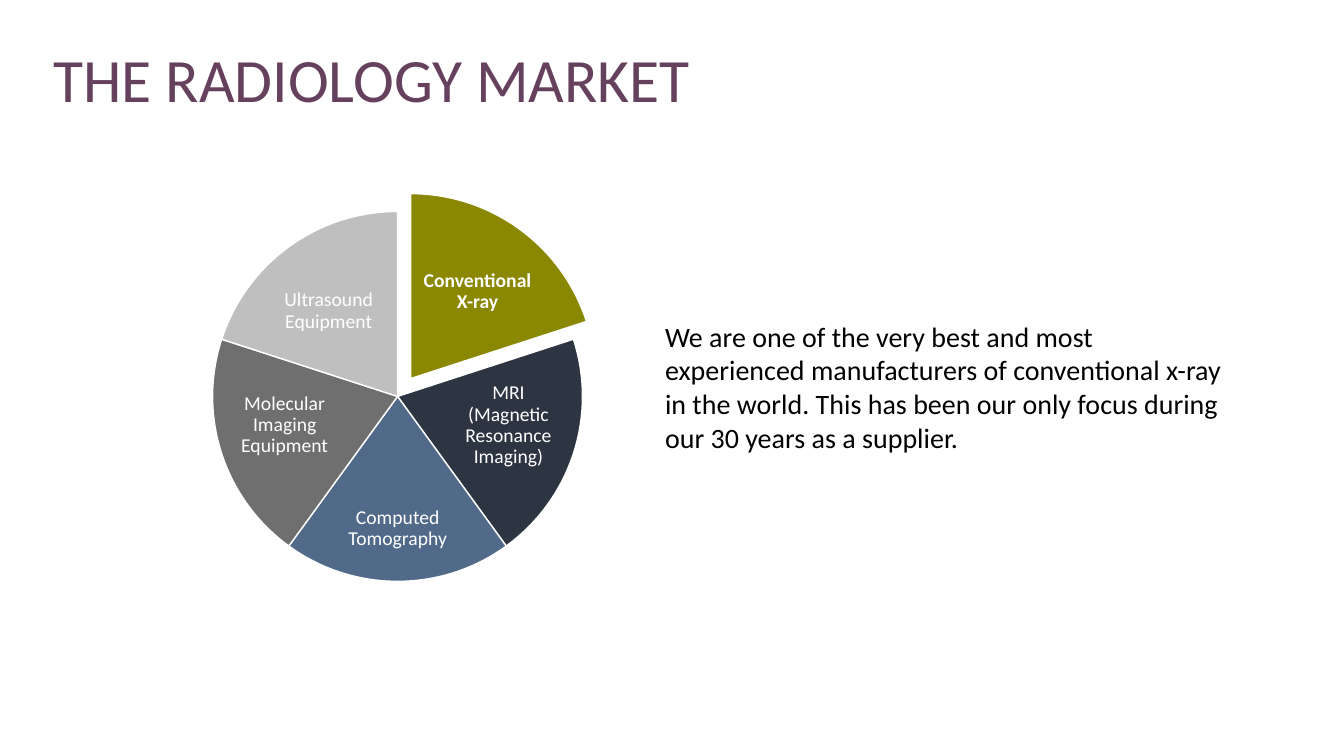
from pptx import Presentation
from pptx.dml.color import RGBColor
from pptx.enum import shapes, text
from pptx.util import Cm, Pt

COLOURS = {
    "title": "66415D",
    "body": "000000",
    "white": "FFFFFF",
    "olive": "8A8700",
    "navy": "2D3543",
    "steel": "526A89",
    "grey": "706F6F",
    "silver": "BFBFBF",
}
TITLE_FORMAT = {"size": Pt(44), "bold": False}
BODY_FORMAT = {"size": Pt(20), "bold": False}
LABEL_FORMAT = {"size": Pt(14), "bold": False}
HIGHLIGHT_FORMAT = {"size": Pt(14), "bold": True}

PIE_SIZE = 9.32
PIE_CORNER = (5.36, 5.33)
HIGHLIGHT_CORNER = (5.69, 4.88)

# Clockwise from the top: label, colour, pie corner, label box, label format
SLICES = [
    ("Conventional X-ray", "olive", HIGHLIGHT_CORNER,
     (10.46, 6.27, 3.15, 2.16), HIGHLIGHT_FORMAT),
    ("MRI (Magnetic Resonance Imaging)", "navy", PIE_CORNER,
     (11.43, 9.55, 2.77, 2.34), LABEL_FORMAT),
    ("Computed Tomography", "steel", PIE_CORNER,
     (8.36, 12.32, 3.33, 2.01), LABEL_FORMAT),
    ("Molecular Imaging Equipment", "grey", PIE_CORNER,
     (5.79, 9.55, 2.77, 2.34), LABEL_FORMAT),
    ("Ultrasound Equipment", "silver", PIE_CORNER,
     (6.71, 6.76, 3.15, 2.16), LABEL_FORMAT),
]


def colour(name):
    return RGBColor.from_string(COLOURS[name])


def write(shape, wording, font_format, colour_name, **paragraph_format):
    """Fill a shape with one formatted paragraph."""
    frame = shape.text_frame
    frame.word_wrap = True
    frame.text = wording
    paragraph = frame.paragraphs[0]
    for name, value in paragraph_format.items():
        setattr(paragraph, name, value)
    font = paragraph.runs[0].font
    for name, value in font_format.items():
        setattr(font, name, value)
    font.name = "Calibri"
    font.color.rgb = colour(colour_name)
    return frame


def add_title(slide, wording):
    title = slide.shapes.title
    title.left, title.top, title.width, title.height = map(
        Cm, (1.09, 1.07, 20.7, 2.01))
    frame = write(title, wording, TITLE_FORMAT, "title",
                  alignment=text.PP_ALIGN.LEFT, line_spacing=0.9)
    frame.auto_size = text.MSO_AUTO_SIZE.NONE
    frame.vertical_anchor = text.MSO_ANCHOR.MIDDLE


def add_statement(slide, wording):
    box = slide.shapes.add_textbox(*map(Cm, (16.51, 7.92, 14.96, 3.68)))
    write(box, wording, BODY_FORMAT, "body")


def add_slice(group, start, sweep, corner, colour_name):
    shape = group.shapes.add_shape(
        shapes.MSO_SHAPE.PIE, *map(Cm, (*corner, PIE_SIZE, PIE_SIZE)))
    # An adjustment of 0.6 is one degree
    shape.adjustments[0] = start % 360 * 0.6
    shape.adjustments[1] = (start + sweep) % 360 * 0.6
    shape.shadow.inherit = False
    shape.fill.solid()
    shape.fill.fore_color.rgb = colour(colour_name)
    shape.line.color.rgb = colour("white")
    shape.line.width = Pt(1)


def add_label(group, wording, box, font_format):
    label = group.shapes.add_textbox(*map(Cm, box))
    frame = write(label, wording, font_format, "white",
                  alignment=text.PP_ALIGN.CENTER, line_spacing=0.9)
    frame.vertical_anchor = text.MSO_ANCHOR.MIDDLE
    for side in ("left", "top", "right", "bottom"):
        setattr(frame, f"margin_{side}", Cm(0.05))


def add_pie(slide):
    group = slide.shapes.add_group_shape()
    sweep = 360 / len(SLICES)
    for index, (wording, fill, corner, box, font_format) in enumerate(SLICES):
        add_slice(group, 270 + index * sweep, sweep, corner, fill)
        add_label(group, wording, box, font_format)


def main():
    presentation = Presentation()
    presentation.slide_width = Cm(33.87)
    presentation.slide_height = Cm(19.05)
    slide = presentation.slides.add_slide(presentation.slide_layouts[5])

    # Heading and statement
    add_title(slide, "THE RADIOLOGY MARKET")
    add_statement(slide, "We are one of the very best and most experienced "
                  "manufacturers of conventional x-ray in the world. This has "
                  "been our only focus during our 30 years as a supplier.")

    # Market segments
    add_pie(slide)

    presentation.save("out.pptx")


if __name__ == "__main__":
    main()
